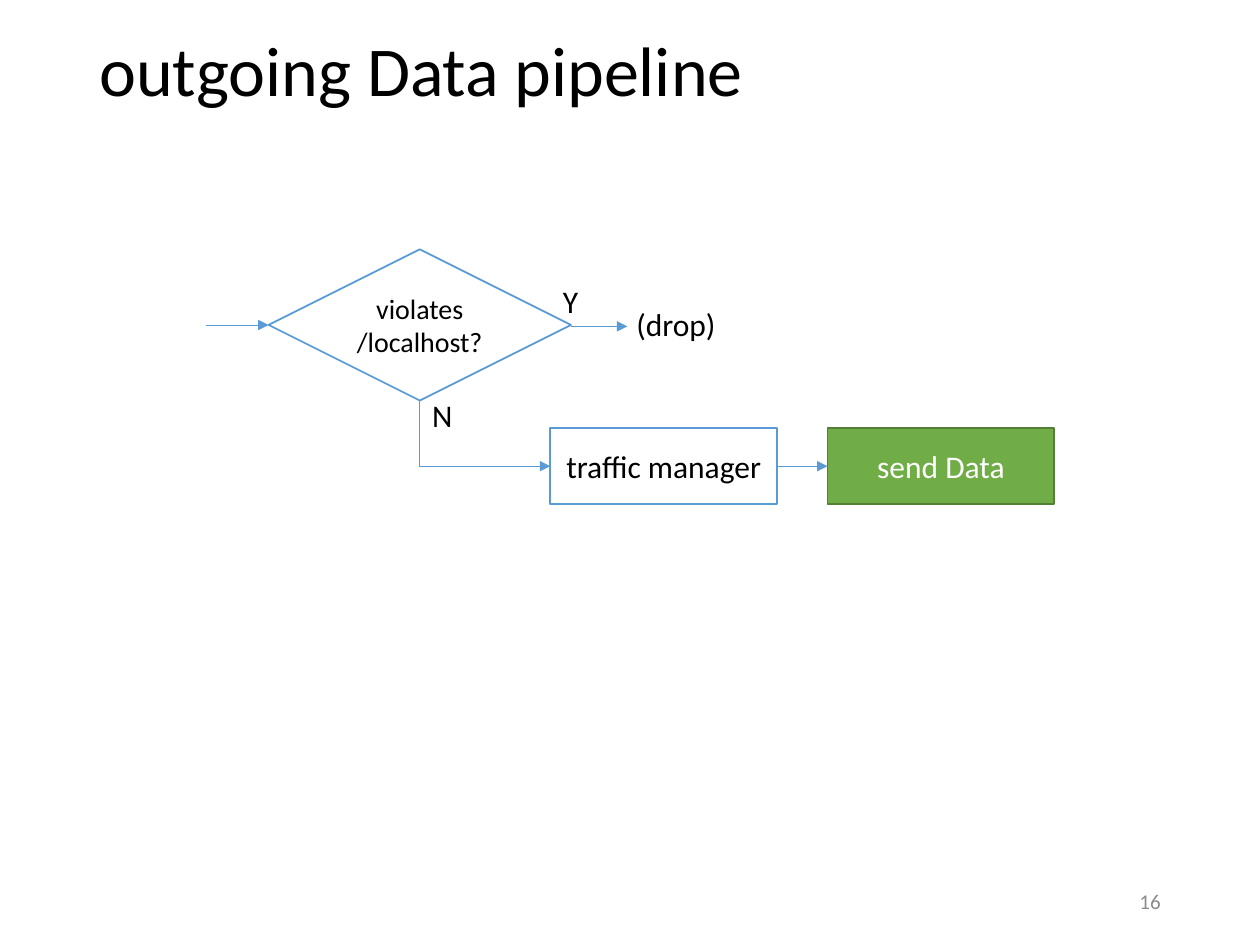
from dataclasses import dataclass

from lxml import etree
from pptx import Presentation
from pptx.dml.color import RGBColor
from pptx.enum.shapes import MSO_CONNECTOR, MSO_SHAPE
from pptx.enum.text import MSO_ANCHOR, PP_ALIGN
from pptx.oxml.ns import qn
from pptx.util import Pt

RECTANGLE = MSO_SHAPE.RECTANGLE
DECISION = MSO_SHAPE.FLOWCHART_DECISION
STRAIGHT, ELBOW = MSO_CONNECTOR.STRAIGHT, MSO_CONNECTOR.ELBOW
LEFT, CENTER, RIGHT = PP_ALIGN.LEFT, PP_ALIGN.CENTER, PP_ALIGN.RIGHT
TOP, MIDDLE = MSO_ANCHOR.TOP, MSO_ANCHOR.MIDDLE

FONT = "Calibri"
BLACK, WHITE, GRAY = "000000", "FFFFFF", "8C8C8C"
BLUE, GREEN, DARK_GREEN = "5B9BD5", "70AD47", "538035"


@dataclass
class Box:
    left: float
    top: float
    width: float
    height: float

    @property
    def right(self) -> float:
        return self.left + self.width

    @property
    def bottom(self) -> float:
        return self.top + self.height

    @property
    def center_x(self) -> float:
        return self.left + self.width / 2

    @property
    def center_y(self) -> float:
        return self.top + self.height / 2

    def in_points(self) -> list:
        return [Pt(v) for v in (self.left, self.top, self.width, self.height)]


@dataclass
class Label:
    text: str
    box: Box
    size: float = 18
    color: str = BLACK
    align: PP_ALIGN = LEFT
    anchor: MSO_ANCHOR = TOP
    wrap: bool = False
    line_spacing: float = 1.0


@dataclass
class Step:
    text: str
    box: Box
    kind: MSO_SHAPE = RECTANGLE
    size: float = 18
    fill: str = WHITE
    line: str = BLUE
    color: str = BLACK


def rgb(color: str) -> RGBColor:
    return RGBColor.from_string(color)


def write_text(shape, text: str, size: float, color: str, align: PP_ALIGN,
               anchor: MSO_ANCHOR, wrap: bool, line_spacing: float = 1.0) -> None:
    frame = shape.text_frame
    frame.word_wrap = wrap
    frame.vertical_anchor = anchor
    paragraph = frame.paragraphs[0]
    paragraph.alignment = align
    paragraph.line_spacing = line_spacing
    run = paragraph.add_run()
    run.text = text
    for name, value in {"name": FONT, "size": Pt(size)}.items():
        setattr(run.font, name, value)
    run.font.color.rgb = rgb(color)


def draw_label(slide, label: Label) -> None:
    shape = slide.shapes.add_textbox(*label.box.in_points())
    write_text(shape, label.text, label.size, label.color, label.align,
               label.anchor, label.wrap, label.line_spacing)


def draw_step(slide, step: Step) -> None:
    shape = slide.shapes.add_shape(step.kind, *step.box.in_points())
    shape.shadow.inherit = False
    shape.fill.solid()
    shape.fill.fore_color.rgb = rgb(step.fill)
    shape.line.color.rgb = rgb(step.line)
    shape.line.width = Pt(1)
    write_text(shape, step.text, step.size, step.color, CENTER, MIDDLE, True)


def draw_arrow(slide, kind: MSO_CONNECTOR, x1: float, y1: float, x2: float, y2: float):
    connector = slide.shapes.add_connector(kind, Pt(x1), Pt(y1), Pt(x2), Pt(y2))
    connector.line.color.rgb = rgb(BLUE)
    connector.line.width = Pt(0.5)
    properties = connector._element.spPr
    etree.SubElement(properties.find(qn("a:ln")), qn("a:tailEnd"), type="triangle")
    etree.SubElement(properties, qn("a:effectLst"))
    return connector


def draw_down_then_right_arrow(slide, x1: float, y1: float, x2: float, y2: float) -> None:
    """Draw a one-corner elbow: a mirrored connector turned by 270 degrees about its centre."""
    center_x, center_y = (x1 + x2) / 2, (y1 + y2) / 2
    half_width, half_height = (y2 - y1) / 2, (x2 - x1) / 2
    connector = draw_arrow(slide, ELBOW, center_x + half_width, center_y - half_height,
                           center_x - half_width, center_y + half_height)
    properties = connector._element.spPr
    properties.find(qn("a:xfrm")).set("rot", str(270 * 60000))
    properties.find(qn("a:prstGeom")).set("prst", "bentConnector2")


def main() -> None:
    presentation = Presentation()
    presentation.slide_width, presentation.slide_height = Pt(720), Pt(540)
    slide = presentation.slides.add_slide(presentation.slide_layouts[6])

    decision = Box(153.5, 142.5, 172.8, 86.4)
    manager = Box(314.5, 244.8, 129.6, 43.2)
    send = Box(manager.right + 28.8, manager.top, manager.width, manager.height)

    steps = [
        Step("traffic manager", manager),
        Step("send Data", send, fill=GREEN, line=DARK_GREEN, color=WHITE),
        Step("violates /localhost?", decision, kind=DECISION, size=16),
    ]
    for step in steps:
        draw_step(slide, step)

    exit_y = decision.center_y + 0.8
    straight_arrows = [
        (manager.right, manager.center_y, send.left, send.center_y),
        (118, decision.center_y, decision.left, decision.center_y),
        (decision.right, exit_y, 358.5, exit_y),
    ]
    for ends in straight_arrows:
        draw_arrow(slide, STRAIGHT, *ends)
    draw_down_then_right_arrow(slide, decision.center_x, decision.bottom,
                               manager.left, manager.center_y)

    labels = [
        Label("outgoing Data pipeline", Box(49.7, 1.4, 620.6, 82.1), size=40,
              anchor=MIDDLE, wrap=True, line_spacing=0.9),
        Label("16", Box(508.3, 500.4, 162, 28.8), size=12, color=GRAY,
              align=RIGHT, anchor=MIDDLE, wrap=True),
        Label("Y", Box(314.5, 157.7, 23, 29)),
        Label("(drop)", Box(356.5, 170.7, 60.5, 29)),
        Label("N", Box(decision.center_x, 222.5, 26, 29)),
    ]
    for label in labels:
        draw_label(slide, label)

    presentation.save("out.pptx")


if __name__ == "__main__":
    main()
